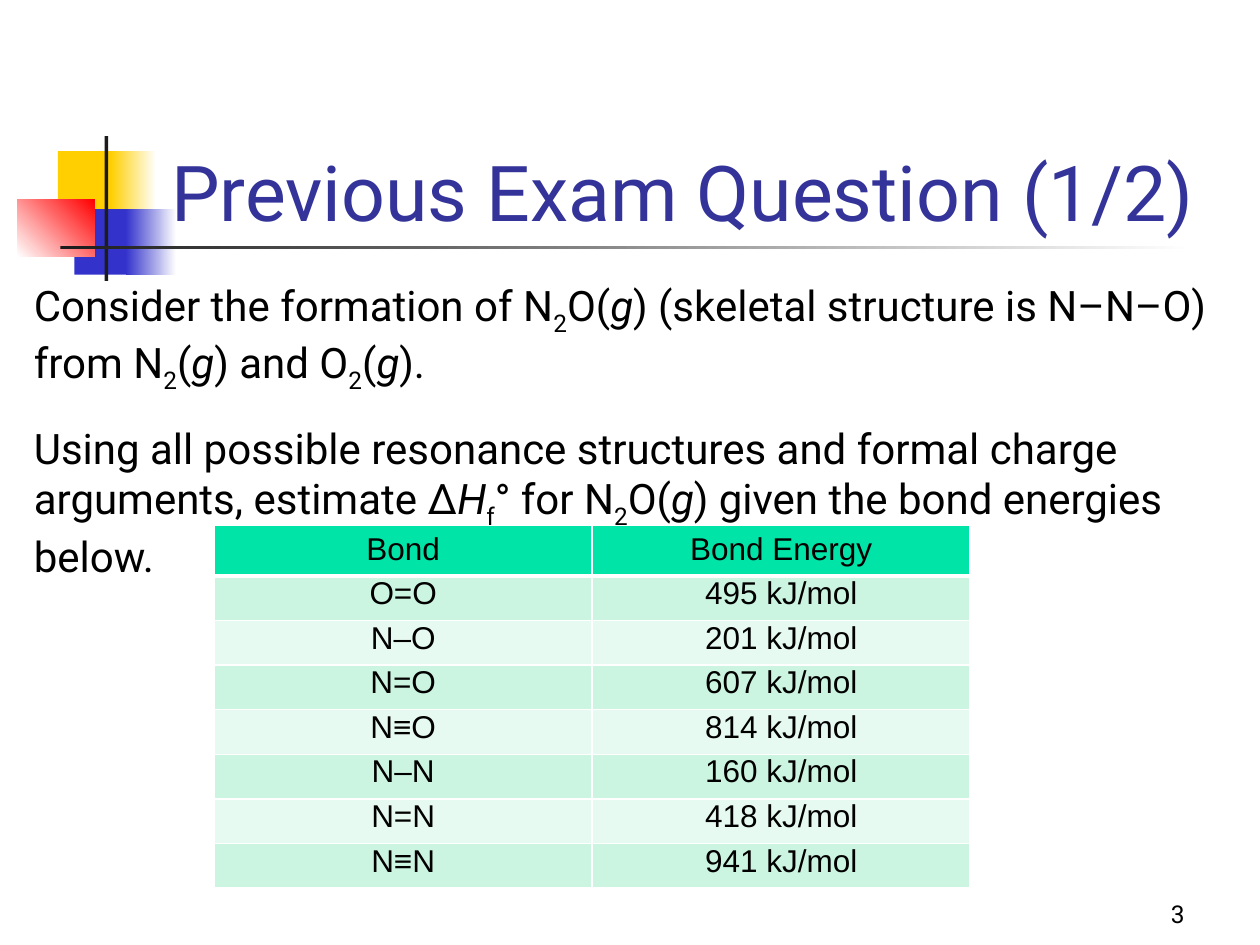
from lxml.etree import SubElement
from pptx import Presentation
from pptx.dml.color import RGBColor
from pptx.enum.shapes import MSO_SHAPE as Shape
from pptx.enum.text import MSO_ANCHOR as Anchor, PP_ALIGN as Align
from pptx.oxml.ns import qn
from pptx.util import Inches, Pt

THEME = {
    "yellow": "FFCF01", "blue": "3333CC", "red": "FF0000", "dark": "1C1C1C",
    "white": "FFFFFF", "title": "333399", "text": "000000",
    "header": "00E4A8", "bands": ("CCF5E1", "E7FAF1"),
    "font": "Roboto", "table_font": "Arial",
    "title_size": 44, "body_size": 24, "table_size": 18, "number_size": 14,
}

DECORATIONS = [
    ((0.46, 1.2, 0.48, 0.52), ("yellow",), 0),
    ((0.88, 1.2, 0.36, 0.52), ("yellow", "white"), 0),
    ((0.59, 1.66, 0.46, 0.52), ("blue",), 0),
    ((1, 1.66, 0.4, 0.52), ("blue", "white"), 0),
    ((0.14, 1.58, 0.61, 0.46), ("white", "red"), 45),
    ((0.83, 1.08, 0.03, 1.15), ("dark",), 0),
    ((0.48, 1.95, 9, 0.03), ("dark", "white"), 0),
]

TITLE = [[("Previous Exam Question (1/2)", "")]]
NUMBER = [[("3", "")]]
QUESTION = [
    [("Consider the formation of N", ""), ("2", "sub"), ("O(", ""), ("g", "italic"),
     (") (skeletal structure is N–N–O) from N", ""), ("2", "sub"), ("(", ""),
     ("g", "italic"), (") and O", ""), ("2", "sub"), ("(", ""), ("g", "italic"),
     (").", "")],
    [("Using all possible resonance structures and formal charge arguments, estimate Δ", ""),
     ("H", "italic"), ("f", "sub"), ("° for N", ""), ("2", "sub"), ("O(", ""),
     ("g", "italic"), (") given the bond energies below.", "")],
]

HEADINGS = ("Bond", "Bond Energy")
BONDS = [("O=O", 495), ("N–O", 201), ("N=O", 607), ("N≡O", 814),
         ("N–N", 160), ("N=N", 418), ("N≡N", 941)]
TABLE_AREA = (1.7, 4.17, 6, 2.88)
HEADER_HEIGHT = 0.4


def color(name):
    return RGBColor.from_string(THEME.get(name, name))


def add_span(para, text, style, size, tint, font):
    span = para.add_run()
    span.text = text
    span.font.name = font
    span.font.size = Pt(size)
    span.font.color.rgb = color(tint)
    if style == "italic":
        span.font.italic = True
    if style == "sub":
        span.font._element.set("baseline", "-25000")


def add_text(page, area, paragraphs, size, tint="text", anchor=Anchor.TOP,
             align=Align.LEFT, gap=0):
    frame = page.shapes.add_textbox(*map(Inches, area)).text_frame
    frame.word_wrap = True
    frame.vertical_anchor = anchor
    for index, spans in enumerate(paragraphs):
        para = frame.add_paragraph() if index else frame.paragraphs[0]
        para.alignment = align
        para.space_before = Pt(gap if index else 0)
        for text, style in spans:
            add_span(para, text, style, size, tint, THEME["font"])


def add_decoration(page, area, tints, angle):
    box = page.shapes.add_shape(Shape.RECTANGLE, *map(Inches, area))
    box.shadow.inherit = False
    box.line.fill.background()
    if len(tints) == 1:
        box.fill.solid()
        box.fill.fore_color.rgb = color(tints[0])
        return
    box.fill.gradient()
    box.fill.gradient_angle = angle
    for stop, tint in zip(box.fill.gradient_stops, tints):
        stop.color.rgb = color(tint)


def add_borders(cell, bottom):
    properties = cell._tc.get_or_add_tcPr()
    for side, width in (("L", 1), ("R", 1), ("T", 1), ("B", bottom)):
        line = SubElement(properties, qn(f"a:ln{side}"), w=str(Pt(width)))
        fill = SubElement(line, qn("a:solidFill"))
        SubElement(fill, qn("a:srgbClr"), val=THEME["white"])


def fill_cell(cell, text, fill, margins, bottom):
    cell.margin_left = cell.margin_right = Inches(margins[0])
    cell.margin_top = cell.margin_bottom = Inches(margins[1])
    add_borders(cell, bottom)
    cell.fill.solid()
    cell.fill.fore_color.rgb = color(fill)
    para = cell.text_frame.paragraphs[0]
    para.alignment = Align.CENTER
    add_span(para, text, "", THEME["table_size"], "text", THEME["table_font"])


def add_bond_table(page):
    rows = [HEADINGS] + [(bond, f"{energy} kJ/mol") for bond, energy in BONDS]
    table = page.shapes.add_table(len(rows), len(HEADINGS), *map(Inches, TABLE_AREA)).table
    row_height = (TABLE_AREA[3] - HEADER_HEIGHT) / len(BONDS)
    for index, values in enumerate(rows):
        header = index == 0
        table.rows[index].height = Inches(HEADER_HEIGHT if header else row_height)
        fill = "header" if header else THEME["bands"][(index - 1) % 2]
        margins = (0.1, 0.05) if header else (0.07, 0)
        for column, text in enumerate(values):
            fill_cell(table.cell(index, column), text, fill, margins, 3 if header else 1)


def main():
    deck = Presentation()
    deck.slide_width, deck.slide_height = Inches(10), Inches(7.5)
    page = deck.slides.add_slide(deck.slide_layouts[6])
    for area, tints, angle in DECORATIONS:
        add_decoration(page, area, tints, angle)
    add_text(page, (1.26, 0.68, 8.52, 1.25), TITLE, THEME["title_size"], "title", Anchor.BOTTOM)
    add_text(page, (0.17, 2.17, 9.61, 5.25), QUESTION, THEME["body_size"], gap=16)
    add_text(page, (7.42, 6.92, 2.08, 0.5), NUMBER, THEME["number_size"],
             anchor=Anchor.BOTTOM, align=Align.RIGHT)
    add_bond_table(page)
    deck.save("out.pptx")


if __name__ == "__main__":
    main()
